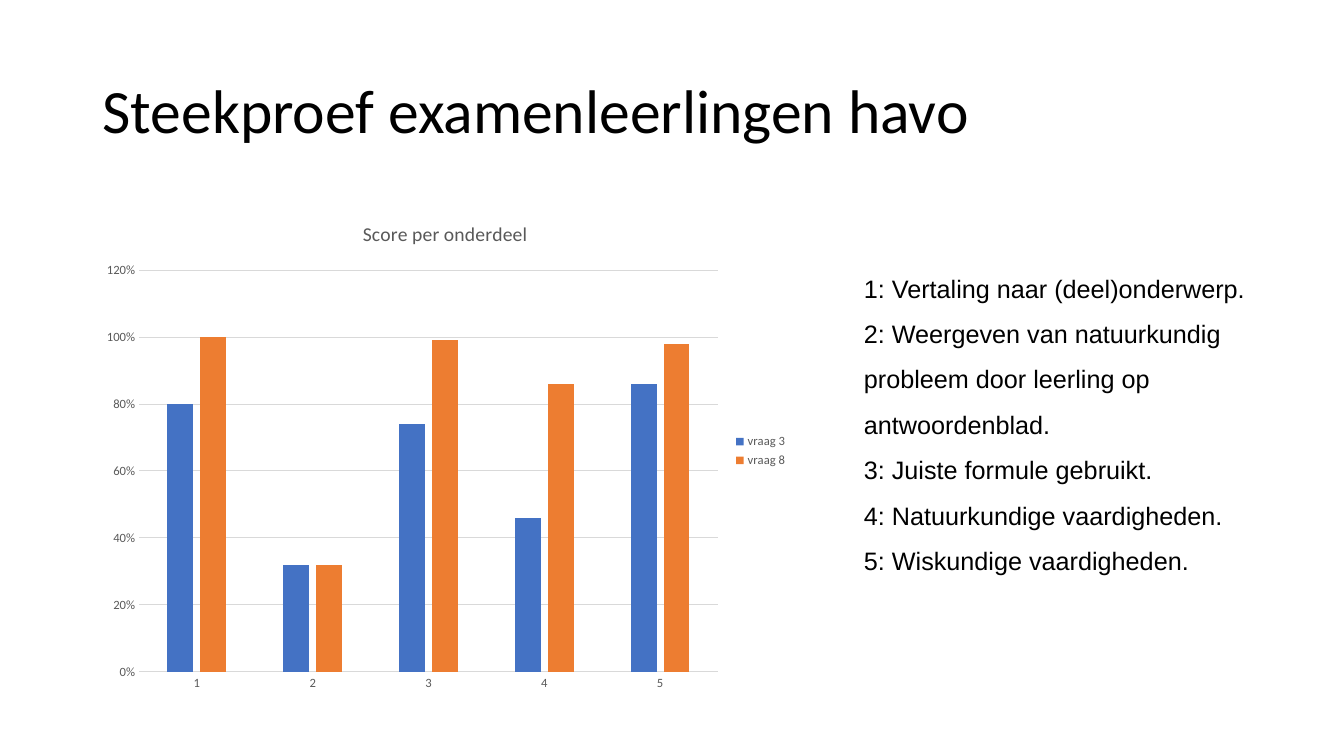
"""Build the slide with the sample scores of havo exam pupils."""
from dataclasses import dataclass

from pptx import Presentation
from pptx.chart.chart import Chart
from pptx.chart.data import CategoryChartData
from pptx.dml.color import RGBColor
from pptx.enum.chart import XL_CHART_TYPE, XL_LEGEND_POSITION, XL_TICK_MARK
from pptx.enum.text import MSO_ANCHOR
from pptx.slide import Slide
from pptx.text.text import Font
from pptx.util import Inches, Pt

BLACK = "000000"
GREY = "595959"
LIGHT_GREY = "D9D9D9"


@dataclass(frozen=True)
class TextBlock:
    left: float
    top: float
    width: float
    height: float
    lines: tuple[str, ...]
    font_name: str
    size: float
    line_spacing: float
    anchor: MSO_ANCHOR


@dataclass(frozen=True)
class Question:
    name: str
    scores: tuple[float, ...]
    color: str


TEXT_BLOCKS = (
    TextBlock(0.92, 0.4, 11.5, 1.45, ("Steekproef examenleerlingen havo",),
              "Calibri", 44, 0.9, MSO_ANCHOR.MIDDLE),
    TextBlock(8.47, 2.51, 4.47, 3.58, (
        "1: Vertaling naar (deel)onderwerp.",
        "2: Weergeven van natuurkundig probleem door leerling op antwoordenblad.",
        "3: Juiste formule gebruikt.",
        "4: Natuurkundige vaardigheden.",
        "5: Wiskundige vaardigheden.",
    ), "Arial", 18, 1.5, MSO_ANCHOR.TOP),
)

QUESTIONS = (
    Question("vraag 3", (0.8, 0.32, 0.74, 0.46, 0.86), "4472C4"),
    Question("vraag 8", (1, 0.32, 0.99, 0.86, 0.98), "ED7D31"),
)


def rgb(color: str) -> RGBColor:
    return RGBColor.from_string(color)


def style_font(font: Font, name: str, size: float, color: str) -> None:
    font.name = name
    font.size = Pt(size)
    font.bold = False
    font.color.rgb = rgb(color)


def add_text(page: Slide, block: TextBlock) -> None:
    box = page.shapes.add_textbox(Inches(block.left), Inches(block.top),
                                  Inches(block.width), Inches(block.height))
    frame = box.text_frame
    frame.word_wrap = True
    frame.vertical_anchor = block.anchor
    frame.text = "\n".join(block.lines)
    for para in frame.paragraphs:
        para.line_spacing = block.line_spacing
        for span in para.runs:
            style_font(span.font, block.font_name, block.size, BLACK)


def style_axes(chart: Chart) -> None:
    for axis in (chart.category_axis, chart.value_axis):
        axis.major_tick_mark = XL_TICK_MARK.NONE
        axis.minor_tick_mark = XL_TICK_MARK.NONE
        style_font(axis.tick_labels.font, "Calibri", 9, GREY)
    values = chart.value_axis
    values.minimum_scale, values.maximum_scale, values.major_unit = 0, 1.2, 0.2
    values.tick_labels.number_format = "0%"
    values.tick_labels.number_format_is_linked = False
    values.format.line.fill.background()
    for line in (chart.category_axis.format.line, values.major_gridlines.format.line):
        line.color.rgb = rgb(LIGHT_GREY)
        line.width = Pt(0.75)


def add_score_chart(page: Slide) -> None:
    scores = CategoryChartData(number_format="0%")
    scores.categories = [str(part) for part in range(1, 6)]
    for question in QUESTIONS:
        scores.add_series(question.name, question.scores)
    chart = page.shapes.add_chart(XL_CHART_TYPE.COLUMN_CLUSTERED, Inches(0.92), Inches(2),
                                  Inches(6.99), Inches(4.95), scores).chart
    style_font(chart.font, "Calibri", 10, BLACK)

    title = chart.chart_title.text_frame
    title.text = "Score per onderdeel"
    style_font(title.paragraphs[0].runs[0].font, "Calibri", 14, GREY)

    chart.has_legend = True
    chart.legend.position = XL_LEGEND_POSITION.RIGHT
    chart.legend.include_in_layout = False
    style_font(chart.legend.font, "Calibri", 9, GREY)

    style_axes(chart)
    plot = chart.plots[0]
    plot.gap_width, plot.overlap = 219, -27
    plot.vary_by_categories = False
    for series, question in zip(plot.series, QUESTIONS):
        series.format.fill.solid()
        series.format.fill.fore_color.rgb = rgb(question.color)


def main() -> None:
    deck = Presentation()
    deck.slide_width, deck.slide_height = Inches(13.33), Inches(7.5)
    page = deck.slides.add_slide(deck.slide_layouts[6])
    for block in TEXT_BLOCKS:
        add_text(page, block)
    add_score_chart(page)
    deck.save("out.pptx")


if __name__ == "__main__":
    main()
